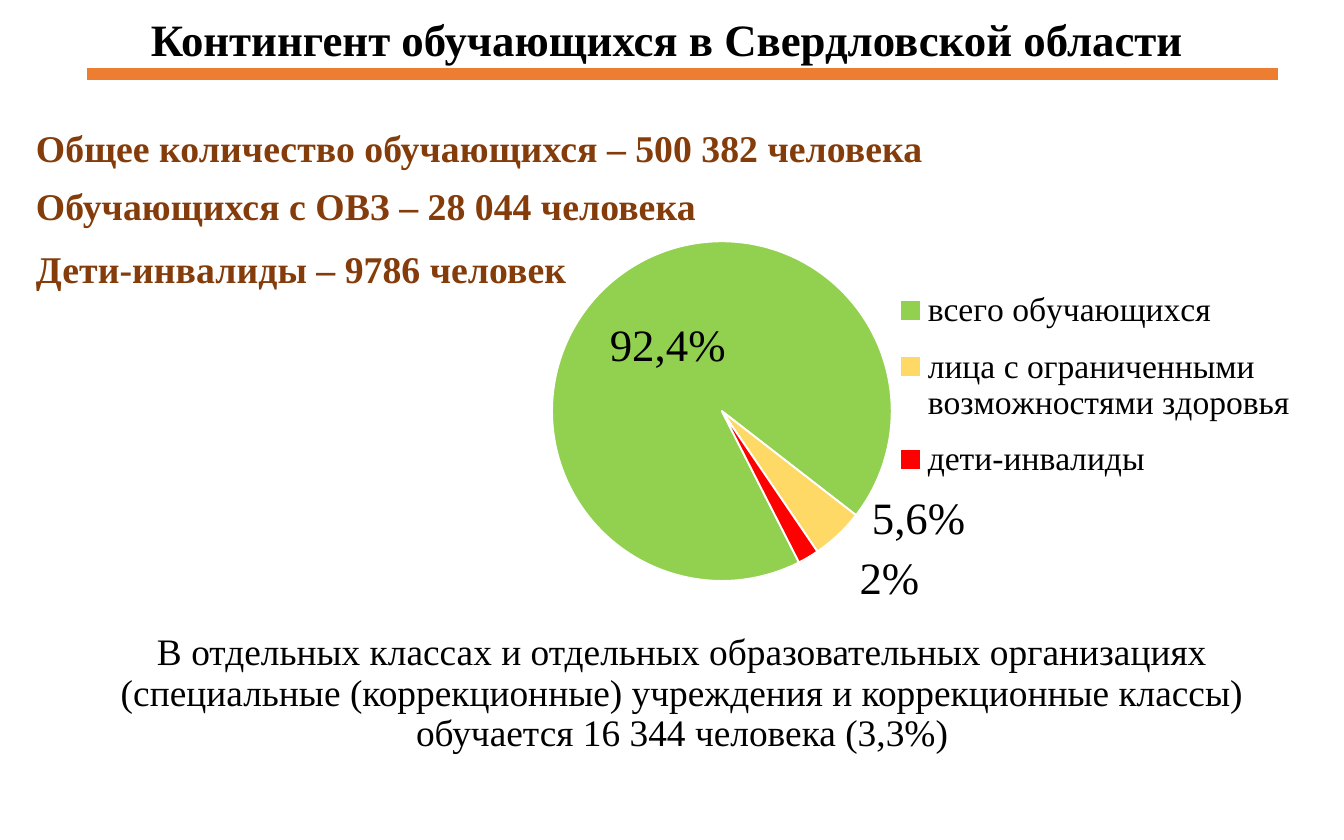
from lxml.etree import SubElement
from pptx import Presentation
from pptx.chart.data import CategoryChartData as ChartData
from pptx.dml.color import RGBColor
from pptx.enum.chart import (XL_CHART_TYPE as Chart, XL_LABEL_POSITION as Spot,
                             XL_LEGEND_POSITION as Side)
from pptx.enum.shapes import MSO_CONNECTOR as Link
from pptx.enum.text import MSO_ANCHOR as Anchor, PP_ALIGN as Align
from pptx.oxml import parse_xml
from pptx.oxml.ns import nsdecls, qn
from pptx.util import Pt

FACE = "Times New Roman"
BLACK, BROWN, ORANGE, WHITE = "000000", "843C0B", "ED7D31", "FFFFFF"

# category, share, label, colour, label shift as fractions of the chart
# (a label without a shift is centred in its slice)
SLICES = [
    ("всего обучающихся", 93, "92,4%", "92D050", None),
    ("лица с ограниченными возможностями здоровья", 5, "5,6%", "FFD966", (0.03, -0.09)),
    ("дети-инвалиды", 2, "2%", "FF0000", (0.05, -0.02)),
]
# text, space before
COUNTS = [
    ("Общее количество обучающихся – 500 382 человека", 0),
    ("Обучающихся с ОВЗ – 28 044 человека", 9),
    ("Дети-инвалиды – 9786 человек", 12),
]


def color(code):
    return RGBColor.from_string(code)


def style(font, size, code=BLACK, bold=False):
    font.name, font.size, font.bold = FACE, Pt(size), bold
    font.color.rgb = color(code)


def add_text(slide, box, lines, size, code=BLACK, bold=False,
             align=Align.LEFT, anchor=Anchor.TOP, pitch=0.9):
    """Fill a box with (text, space before) lines of one style."""
    frame = slide.shapes.add_textbox(*map(Pt, box)).text_frame
    frame.word_wrap = True
    frame.vertical_anchor = anchor
    for i, (text, gap) in enumerate(lines):
        para = frame.add_paragraph() if i else frame.paragraphs[0]
        para.text = text
        para.alignment = align
        para.line_spacing = pitch
        para.space_before = Pt(gap)
        style(para.font, size, code, bold)


def add_title(slide, box):
    add_text(slide, box, [("Контингент обучающихся в Свердловской области", 0)],
             24, bold=True, align=Align.CENTER, pitch=1)


def add_rule(slide, box):
    left, top, width = box
    rule = slide.shapes.add_connector(
        Link.STRAIGHT, Pt(left), Pt(top), Pt(left + width), Pt(top))
    rule.line.color.rgb = color(ORANGE)
    rule.line.width = Pt(6)
    SubElement(rule._element.spPr, qn("a:effectLst"))


def layout(x, y, w=None, h=None, inner=False):
    """Manual chart layout in fractions; without a size it is a shift."""
    parts = [("layoutTarget", "inner")] if inner else []
    if w:
        parts += [("xMode", "edge"), ("yMode", "edge")]
    parts += [("x", x), ("y", y)]
    if w:
        parts += [("w", w), ("h", h)]
    body = "".join(f'<c:{tag} val="{val}"/>' for tag, val in parts)
    return parse_xml(f'<c:layout {nsdecls("c")}><c:manualLayout>{body}'
                     '</c:manualLayout></c:layout>')


def place(node, after, new):
    """Put a layout behind a child of node, in place of any old one."""
    for old in node.findall(qn("c:layout")):
        node.remove(old)
    if after is None:
        node.insert(0, new)
    else:
        node.find(qn(after)).addnext(new)


def put_last(node, tag, val):
    """Set a child that must close its node."""
    for old in node.findall(qn(tag)):
        node.remove(old)
    SubElement(node, qn(tag)).set("val", val)


def add_pie(slide, box):
    data = ChartData()
    data.categories = [row[0] for row in SLICES]
    data.add_series("Series 1", [row[1] for row in SLICES])
    chart = slide.shapes.add_chart(Chart.PIE, *map(Pt, box), data).chart
    style(chart.font, 18)
    chart.has_title = False
    chart.has_legend = True
    chart.legend.position = Side.RIGHT
    chart.legend.include_in_layout = False
    style(chart.legend.font, 18)

    plot = chart.plots[0]
    plot.vary_by_categories = True
    series = plot.series[0]
    labels = series.data_labels
    labels.show_percentage = True
    labels.show_value = False
    style(labels.font, 24)

    root = chart._chartSpace
    for i, (_, _, text, code, shift) in enumerate(SLICES):
        point = series.points[i]
        point.format.fill.solid()
        point.format.fill.fore_color.rgb = color(code)
        point.format.line.color.rgb = color(WHITE)
        point.format.line.width = Pt(1)
        para = point.data_label.text_frame.paragraphs[0]
        para.text = text
        style(para.font, 24)
        label = root.xpath(".//c:dLbl")[i]
        label.find(qn("c:showVal")).set("val", "0")
        label.find(qn("c:showPercent")).set("val", "1")
        if shift:
            place(label, "c:idx", layout(*shift))
        else:
            point.data_label.position = Spot.CENTER

    for group in root.xpath(".//c:dLbls"):
        put_last(group, "c:showLeaderLines", "0")
    put_last(root.xpath(".//c:pieChart")[0], "c:firstSliceAng", "153")
    place(root.xpath(".//c:plotArea")[0], None,
          layout(0.2, 0.13, 0.36, 0.65, inner=True))
    place(root.xpath(".//c:legend")[0], "c:legendPos",
          layout(0.56, 0.19, 0.43, 0.43))


def add_counts(slide, box):
    add_text(slide, box, COUNTS, 20.25, BROWN, bold=True)


def add_note(slide, box):
    note = ("В отдельных классах и отдельных образовательных организациях "
            "(специальные (коррекционные) учреждения и коррекционные классы) "
            "обучается 16 344 человека (3,3%)")
    add_text(slide, box, [(note, 0)], 20, align=Align.CENTER, anchor=Anchor.BOTTOM)


def main():
    deck = Presentation()
    deck.slide_width, deck.slide_height = Pt(720), Pt(450)
    slide = deck.slides.add_slide(deck.slide_layouts[6])
    add_pie(slide, (194.4, 92.9, 506.2, 280))
    add_counts(slide, (12.2, 66, 627.8, 270.7))
    add_rule(slide, (46.8, 39.6, 637.9))
    add_note(slide, (28.2, 355.2, 674.6, 52.6))
    add_title(slide, (46.8, 2.9, 620.6, 36))
    deck.save("out.pptx")


if __name__ == "__main__":
    main()
